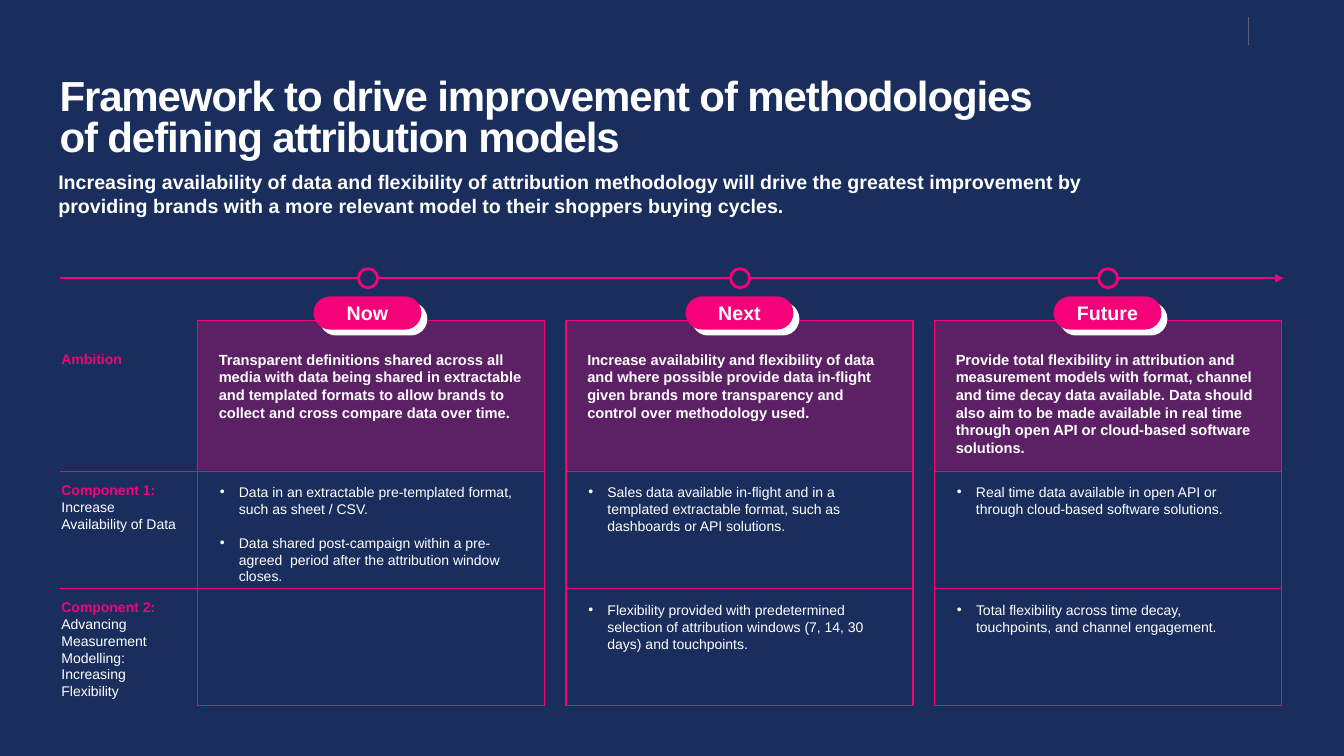
from pptx import Presentation
from pptx.dml.color import RGBColor
from pptx.enum.shapes import MSO_CONNECTOR, MSO_SHAPE
from pptx.enum.text import MSO_ANCHOR, MSO_AUTO_SIZE, PP_ALIGN
from pptx.oxml import parse_xml
from pptx.oxml.ns import nsdecls, qn
from pptx.util import Inches, Pt
from lxml import etree

NAVY, PINK, WHITE, GREY = "1A2E5D", "F50179", "FFFFFF", "5B5F82"
LEFT, COL_LEFT, COL_STEP, COL_W = 0.6, 1.96, 3.655, 3.44
COL_TOP, COL_H, AMBITION_H = 3.18, 3.82, 1.49
ROW_LINES = (4.68, 5.84)
TIMELINE_Y = 2.76
# Top and width of the bullet text in each component row
BULLET_ROWS = ((4.75, 3.44), (5.92, 3.19))

# Stage name, centre of its marker, ambition, bullets of each component
STAGES = [
    ("Now", 3.65,
     "Transparent definitions shared across all media with data being shared in "
     "extractable and templated formats to allow brands to collect and cross "
     "compare data over time.",
     [["Data in an extractable pre-templated format, such as sheet / CSV.",
       "Data shared post-campaign within a pre-agreed  period after the "
       "attribution window closes."], []]),
    ("Next", 7.34,
     "Increase availability and flexibility of data and where possible provide "
     "data in-flight given brands more transparency and control over methodology "
     "used.",
     [["Sales data available in-flight and in a templated extractable format, "
       "such as dashboards or API solutions."],
      ["Flexibility provided with predetermined selection of attribution windows "
       "(7, 14, 30 days) and touchpoints."]]),
    ("Future", 10.99,
     "Provide total flexibility in attribution and measurement models with "
     "format, channel and time decay data available. Data should also aim to be "
     "made available in real time through open API or cloud-based software "
     "solutions.",
     [["Real time data available in open API or through cloud-based software "
       "solutions."],
      ["Total flexibility across time decay, touchpoints, and channel "
       "engagement."]]),
]

# Top, width, heading and description of each row label
ROW_LABELS = [
    (3.43, 1.63, "Ambition", None),
    (4.73, 1.54, "Component 1:", "Increase Availability of Data"),
    (5.89, 1.63, "Component 2:",
     "Advancing Measurement Modelling: Increasing Flexibility"),
]


def rgb(color):
    return RGBColor.from_string(color)


def set_font(p, size, color=WHITE, bold=False):
    for r in p.runs:
        r.font.name = "Arial"
        r.font.size = Pt(size)
        r.font.bold = bold
        r.font.color.rgb = rgb(color)


def set_margins(tf, left, top, right, bottom):
    tf.margin_left, tf.margin_top = Inches(left), Inches(top)
    tf.margin_right, tf.margin_bottom = Inches(right), Inches(bottom)


def add_line(s, x1, y1, x2, y2, color=PINK, width=0.5, arrow=False):
    line = s.shapes.add_connector(MSO_CONNECTOR.STRAIGHT, Inches(x1), Inches(y1),
                                  Inches(x2), Inches(y2))
    line.line.color.rgb = rgb(color)
    line.line.width = Pt(width)
    if arrow:
        etree.SubElement(line.line._get_or_add_ln(), qn("a:tailEnd"),
                         type="triangle")
    etree.SubElement(line._element.spPr, qn("a:effectLst"))


def add_box(s, kind, x, y, w, h, fill=None, line=None, width=1, alpha=None):
    sp = s.shapes.add_shape(kind, Inches(x), Inches(y), Inches(w), Inches(h))
    sp.shadow.inherit = False
    if fill:
        sp.fill.solid()
        sp.fill.fore_color.rgb = rgb(fill)
    else:
        sp.fill.background()
    if alpha:
        clr = sp._element.spPr.find(qn("a:solidFill")).find(qn("a:srgbClr"))
        etree.SubElement(clr, qn("a:alpha"), val=str(alpha * 1000))
    if line:
        sp.line.color.rgb = rgb(line)
        sp.line.width = Pt(width)
    else:
        sp.line.fill.background()
    return sp


def add_text(s, x, y, w, h, texts, size, bold=False, bullets=False, inset=0.2):
    sp = s.shapes.add_textbox(Inches(x), Inches(y), Inches(w), Inches(h))
    tf = sp.text_frame
    tf.word_wrap = True
    set_margins(tf, inset, 0.05, inset, 0.05)
    for i, text in enumerate(texts):
        p = tf.paragraphs[0] if i == 0 else tf.add_paragraph()
        p.text = text
        if bullets:
            pPr = p._p.get_or_add_pPr()
            pPr.set("marL", str(Inches(0.19)))
            pPr.set("indent", str(-Inches(0.19)))
            etree.SubElement(pPr, qn("a:buFont"), typeface="Arial")
            etree.SubElement(pPr, qn("a:buChar"), char="•")
            if i:
                p.space_before = Pt(12)
        set_font(p, size, WHITE, bold)
    return tf


def add_title(s, text):
    title = s.shapes.title
    title.left, title.top = Inches(0), Inches(0)
    title.width, title.height = Inches(10.77), Inches(1.45)
    tf = title.text_frame
    tf.text = text
    tf.word_wrap = True
    tf.auto_size = MSO_AUTO_SIZE.NONE
    tf.vertical_anchor = MSO_ANCHOR.TOP
    set_margins(tf, 0.59, 0.79, 0.1, 0.05)
    p = tf.paragraphs[0]
    p.alignment = PP_ALIGN.LEFT
    p.line_spacing = 0.8
    set_font(p, 30, WHITE, True)
    p.runs[0].font._element.set("spc", "-80")


def add_pill(s, center, text):
    sp = add_box(s, MSO_SHAPE.ROUNDED_RECTANGLE, center - 0.54, 2.94, 1.07, 0.33,
                 PINK)
    sp.adjustments[0] = 0.5
    # Hard white shadow to the lower right
    sp._element.spPr.find(qn("a:effectLst")).append(parse_xml(
        f'<a:outerShdw {nsdecls("a")} blurRad="0" dist="{Pt(6)}" dir="2700000" '
        f'algn="tl" rotWithShape="0"><a:srgbClr val="{WHITE}"/></a:outerShdw>'))
    tf = sp.text_frame
    tf.text = text
    tf.vertical_anchor = MSO_ANCHOR.MIDDLE
    set_margins(tf, 0.1, 0, 0.1, 0)
    tf.paragraphs[0].alignment = PP_ALIGN.CENTER
    set_font(tf.paragraphs[0], 14, WHITE, True)


def add_stage(s, index, name, center, ambition, components):
    x = COL_LEFT + index * COL_STEP
    add_box(s, MSO_SHAPE.RECTANGLE, x, COL_TOP, COL_W, AMBITION_H, PINK, alpha=30)
    add_box(s, MSO_SHAPE.RECTANGLE, x, COL_TOP, COL_W, COL_H, line=PINK)
    for y in ROW_LINES:
        add_line(s, x if index else LEFT, y, x + COL_W, y)
    add_box(s, MSO_SHAPE.OVAL, center - 0.095, TIMELINE_Y - 0.095, 0.19, 0.19,
            NAVY, PINK, 2)
    add_pill(s, center, name)
    add_text(s, x + 0.01, 3.43, COL_W, 1.16, [ambition], 10.5, bold=True)
    for (y, w), bullets in zip(BULLET_ROWS, components):
        if bullets:
            add_text(s, x + 0.02, y, w, 0.61, bullets, 10, bullets=True)


def add_row_label(s, y, w, heading, description):
    texts = [heading, description] if description else [heading]
    tf = add_text(s, 0.41, y, w, 0.27, texts, 10)
    set_font(tf.paragraphs[0], 10, PINK, True)


def main():
    prs = Presentation()
    prs.slide_width, prs.slide_height = Inches(13.33), Inches(7.5)
    s = prs.slides.add_slide(prs.slide_layouts[5])
    s.background.fill.solid()
    s.background.fill.fore_color.rgb = rgb(NAVY)

    # Heading
    add_line(s, 12.38, 0.17, 12.38, 0.45, GREY)
    add_title(s, "Framework to drive improvement of methodologies of defining "
                 "attribution models")
    add_text(s, 0.48, 1.64, 10.91, 0.74,
             ["Increasing availability of data and flexibility of attribution "
              "methodology will drive the greatest improvement by providing brands "
              "with a more relevant model to their shoppers buying cycles."],
             14, bold=True, inset=0.1)

    # Timeline, stage columns and row labels
    add_line(s, LEFT, TIMELINE_Y, 12.73, TIMELINE_Y, width=1, arrow=True)
    for i, stage in enumerate(STAGES):
        add_stage(s, i, *stage)
    for label in ROW_LABELS:
        add_row_label(s, *label)

    prs.save("out.pptx")


if __name__ == "__main__":
    main()
